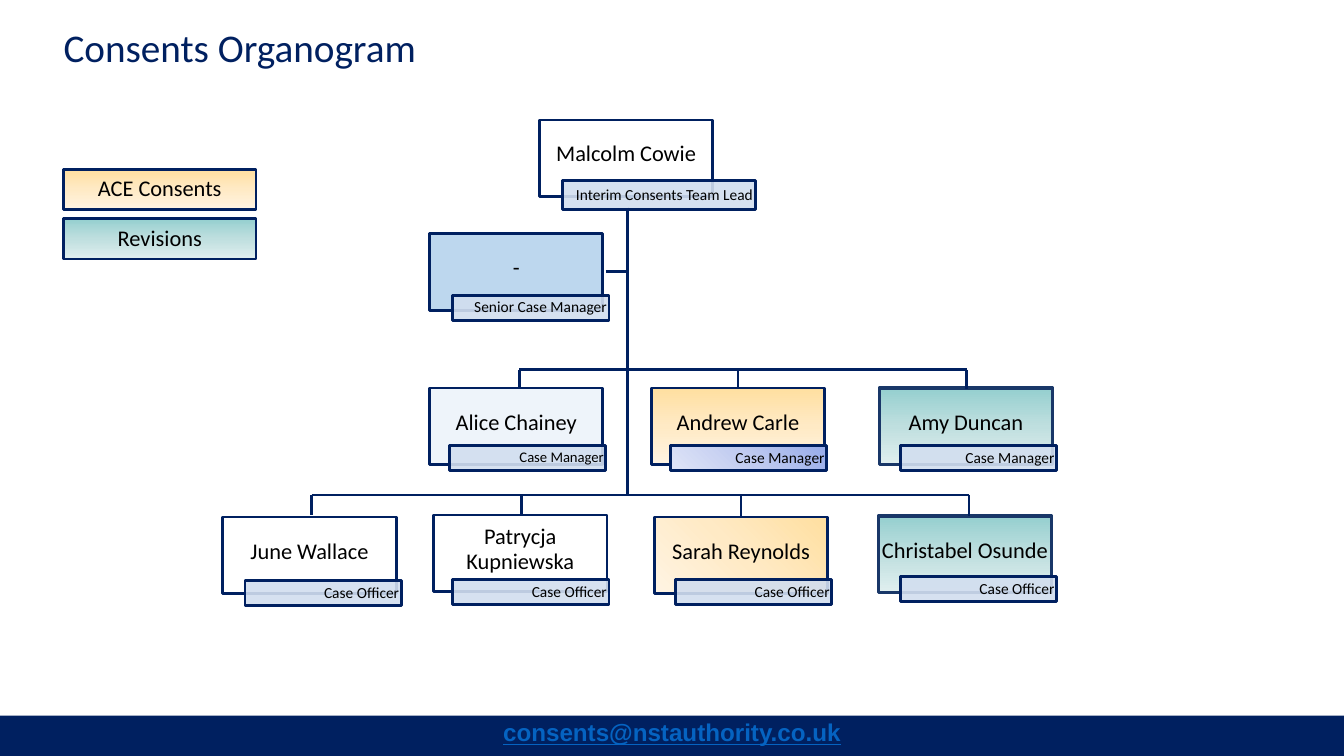
from lxml.etree import SubElement
from pptx import Presentation
from pptx.dml.color import RGBColor
from pptx.enum.shapes import MSO_CONNECTOR, MSO_SHAPE
from pptx.enum.text import MSO_ANCHOR, MSO_AUTO_SIZE, PP_ALIGN
from pptx.oxml.ns import qn
from pptx.util import Inches, Pt

COLUMN = ROW = Inches(1)
COLUMNS, ROWS = 13.33, 7.5
COLORS = {
    "navy": "002060", "slate": "193768", "black": "000000", "white": "FFFFFF",
    "link": "0563C1", "vacant": "BDD7EE", "pale": "DEEBF7", "tag": "D2DEEF",
}
GRADIENTS = {
    "ace": ["FFDFA0", "FFEAC5", "FFF4E3"],
    "revisions": ["95CFCF", "BFDFDF", "E0EFEF"],
    "violet": ["96ABEA", "C0CBF0", "E0E5F7"],
}
CARD_WIDTH, CARD_HEIGHT = 1.72, 0.76
CARD_INSETS = (0.01, 0.01, 0.01, 0.08)
TAG_INSETS = (0.02, 0.01, 0.02, 0.01)

# fmt: off
PEOPLE = [
    ("Malcolm Cowie", "Interim Consents Team Lead", (5.35, 1.19), (5.58, 1.79),
     {"fill": "white", "tag_size": (1.91, 0.29)}),
    ("-", "Senior Case Manager", (4.26, 2.32), (4.49, 2.93), {"fill": "vacant"}),
    ("Alice Chainey", "Case Manager", (4.26, 3.85), (4.46, 4.42),
     {"fill": "pale", "opacity": 50, "role_points": 10.5}),
    ("Andrew Carle", "Case Manager", (6.46, 3.85), (6.65, 4.42),
     {"fill": "ace", "tag_fill": "violet"}),
    ("Amy Duncan", "Case Manager", (8.72, 3.85), (8.93, 4.42),
     {"fill": "revisions", "line": "slate", "weight": 2.25}),
    ("June Wallace", "Case Officer", (2.21, 5.13), (2.43, 5.76), {"fill": "white"}),
    ("Patrycja Kupniewska", "Case Officer", (4.3, 5.11), (4.49, 5.75), {"fill": "white"}),
    ("Sarah Reynolds", "Case Officer", (6.49, 5.13), (6.7, 5.75),
     {"fill": "ace", "angle": 135}),
    ("Christabel Osunde", "Case Officer", (8.71, 5.12), (8.93, 5.72),
     {"fill": "revisions", "line": "slate", "weight": 2.25}),
]


def color(name):
    return RGBColor.from_string(COLORS[name])


def place(shape, left, top, width, height):
    shape.left, shape.top = int(left * COLUMN), int(top * ROW)
    shape.width, shape.height = int(width * COLUMN), int(height * ROW)


def write(shape, text, size, font="Calibri", ink="black", align=PP_ALIGN.CENTER,
          anchor=MSO_ANCHOR.MIDDLE, insets=CARD_INSETS, after=0.0,
          bold=False, underline=False):
    frame = shape.text_frame
    frame.word_wrap = True
    frame.auto_size = MSO_AUTO_SIZE.NONE
    frame.vertical_anchor = anchor
    (frame.margin_left, frame.margin_top,
     frame.margin_right, frame.margin_bottom) = [Inches(inset) for inset in insets]
    para = frame.paragraphs[0]
    para.alignment = align
    para.line_spacing = 0.9
    para.space_before = Pt(0)
    para.space_after = Pt(size * after)
    span = para.add_run()
    span.text = text
    span.font.size = Pt(size)
    span.font.name = font
    span.font.bold = bold
    span.font.underline = underline
    span.font.color.rgb = color(ink)


def paint(shape, fill, opacity=100, angle=90):
    if fill in GRADIENTS:
        shape.fill.gradient()
        shape.fill.gradient_angle = 360 - angle
        stops = shape._element.spPr.find(".//" + qn("a:gsLst"))
        stops.clear()
        for index, tint in enumerate(GRADIENTS[fill]):
            stop = SubElement(stops, qn("a:gs"), pos=str(index * 50000))
            SubElement(stop, qn("a:srgbClr"), val=tint)
        return
    shape.fill.solid()
    shape.fill.fore_color.rgb = color(fill)
    if opacity < 100:
        tint = shape._element.spPr.find(qn("a:solidFill")).find(qn("a:srgbClr"))
        SubElement(tint, qn("a:alpha"), val=str(opacity * 1000))


def add_box(page, text, bounds, fill, size=16, line="navy", weight=2,
            opacity=100, angle=90, **format):
    box = page.shapes.add_shape(MSO_SHAPE.RECTANGLE, 0, 0, 0, 0)
    place(box, *bounds)
    box.shadow.inherit = False
    paint(box, fill, opacity, angle)
    box.line.color.rgb = color(line)
    box.line.width = Pt(weight)
    write(box, text, size, after=0.35, **format)


def add_person(page, name, role, card, tag, tag_size=(1.55, 0.25),
               tag_fill="tag", role_points=11, **style):
    add_box(page, name, (*card, CARD_WIDTH, CARD_HEIGHT), **style)
    add_box(page, role, (*tag, *tag_size), tag_fill, role_points, opacity=90,
            angle=135, align=PP_ALIGN.RIGHT, insets=TAG_INSETS)


def add_line(page, start, end):
    line = page.shapes.add_connector(
        MSO_CONNECTOR.STRAIGHT,
        int(start[0] * COLUMN), int(start[1] * ROW),
        int(end[0] * COLUMN), int(end[1] * ROW))
    line.line.color.rgb = color("navy")
    line.line.width = Pt(2)
    SubElement(line._element.spPr, qn("a:effectLst"))


def add_branch(page, top, drops):
    add_line(page, (drops[0][0], top), (drops[-1][0], top))
    for left, bottom in drops:
        add_line(page, (left, top), (left, bottom))


def add_footer(page, text):
    footer = page.placeholders[1]
    place(footer, 0, ROWS - 0.4, COLUMNS, 0.4)
    paint(footer, "navy")
    properties = footer.text_frame.paragraphs[0]._p.get_or_add_pPr()
    properties.set("marL", "0")
    properties.set("indent", "0")
    SubElement(properties, qn("a:buNone"))
    write(footer, text, 17.3, font="Arial", ink="link", anchor=MSO_ANCHOR.TOP,
          insets=(0.1, 0.05, 0.1, 0.05), bold=True, underline=True)


def main():
    deck = Presentation()
    deck.slide_width, deck.slide_height = int(COLUMNS * COLUMN), int(ROWS * ROW)
    page = deck.slides.add_slide(deck.slide_layouts[1])
    place(page.shapes.title, 0.63, 0.28, 7.76, 0.55)
    write(page.shapes.title, "Consents Organogram", 28, ink="navy",
          align=PP_ALIGN.LEFT, anchor=MSO_ANCHOR.TOP, insets=(0, 0, 0.07, 0.04))
    add_footer(page, "consents@nstauthority.co.uk")
    for index, (text, fill) in enumerate([("ACE Consents", "ace"), ("Revisions", "revisions")]):
        add_box(page, text, (0.63, 1.68 + 0.49 * index, 1.91, 0.4), fill,
                anchor=MSO_ANCHOR.BOTTOM)
    for name, role, card, tag, style in PEOPLE:
        add_person(page, name, role, card, tag, **style)
    add_line(page, (6.22, 2.06), (6.22, 4.91))
    add_line(page, (6.01, 2.69), (6.22, 2.69))
    add_branch(page, 3.67, [(5.15, 3.85), (7.32, 3.85), (9.59, 3.86)])
    add_branch(page, 4.91, [(3.09, 5.11), (5.17, 5.11), (7.35, 5.13), (9.61, 5.12)])
    deck.save("out.pptx")


if __name__ == "__main__":
    main()
